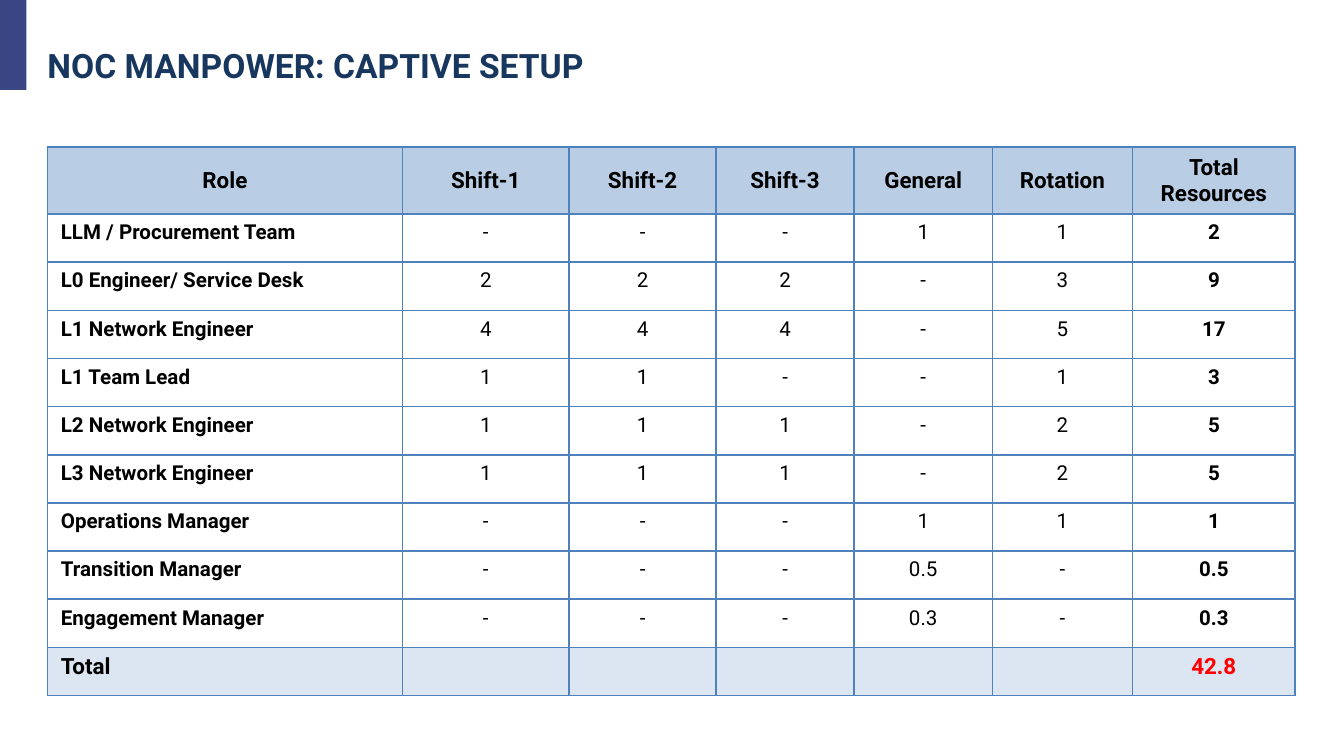
from pptx import Presentation
from pptx.dml.color import RGBColor
from pptx.enum.shapes import MSO_SHAPE as Shape
from pptx.enum.text import MSO_ANCHOR as Anchor, MSO_AUTO_SIZE as AutoSize, PP_ALIGN as Align
from pptx.oxml.ns import qn
from pptx.util import Pt
from lxml.etree import SubElement

FONT = "Roboto"
BLACK = RGBColor(0x00, 0x00, 0x00)
RED = RGBColor(0xFF, 0x00, 0x00)
NAVY = RGBColor(0x17, 0x37, 0x5E)
INDIGO = RGBColor(0x3A, 0x46, 0x83)
BORDER_BLUE = RGBColor(0x4F, 0x81, 0xBD)
HEADER_BLUE = RGBColor(0xB9, 0xCD, 0xE5)
TOTAL_BLUE = RGBColor(0xDC, 0xE6, 0xF2)

COLUMN_WIDTHS = [190.2, 89.4, 78.7, 74, 74, 75.1, 87.2]
HEADER_HEIGHT = 36
ROW_HEIGHT = 25.8

MANPOWER = [
    ["Role", "Shift-1", "Shift-2", "Shift-3", "General", "Rotation", "Total\nResources"],
    ["LLM / Procurement Team", "-", "-", "-", "1", "1", "2"],
    ["L0 Engineer/ Service Desk", "2", "2", "2", "-", "3", "9"],
    ["L1 Network Engineer", "4", "4", "4", "-", "5", "17"],
    ["L1 Team Lead", "1", "1", "-", "-", "1", "3"],
    ["L2 Network Engineer", "1", "1", "1", "-", "2", "5"],
    ["L3 Network Engineer", "1", "1", "1", "-", "2", "5"],
    ["Operations Manager", "-", "-", "-", "1", "1", "1"],
    ["Transition Manager", "-", "-", "-", "0.5", "-", "0.5"],
    ["Engagement Manager", "-", "-", "-", "0.3", "-", "0.3"],
    ["Total", "", "", "", "", "", "42.8"],
]


def format_run(run, size, color, bold):
    """Apply the slide's typeface with the given look to a run."""
    run.font.name = FONT
    run.font.size = Pt(size)
    run.font.bold = bold
    run.font.color.rgb = color


def add_accent_bar(slide):
    """Add the coloured bar in the top left corner."""
    bar = slide.shapes.add_shape(Shape.RECTANGLE, Pt(0), Pt(0), Pt(14.2), Pt(48.2))
    bar.shadow.inherit = False
    bar.fill.solid()
    bar.fill.fore_color.rgb = INDIGO
    bar.line.fill.background()


def set_title(slide, text):
    """Place and format the title placeholder."""
    title = slide.shapes.title
    title.left, title.top, title.width, title.height = Pt(25.4), Pt(20.4), Pt(593.3), Pt(28.8)
    frame = title.text_frame
    frame.text = text
    frame.word_wrap = True
    frame.auto_size = AutoSize.NONE
    frame.vertical_anchor = Anchor.MIDDLE
    frame.margin_left = Pt(0)
    paragraph = frame.paragraphs[0]
    paragraph.alignment = Align.LEFT
    format_run(paragraph.runs[0], 18, NAVY, True)


def set_borders(cell):
    """Draw a thin line on all four sides of a cell."""
    properties = cell._tc.get_or_add_tcPr()
    for side in ("a:lnL", "a:lnR", "a:lnT", "a:lnB"):
        line = SubElement(properties, qn(side), w=str(Pt(1)))
        fill = SubElement(line, qn("a:solidFill"))
        SubElement(fill, qn("a:srgbClr"), val=str(BORDER_BLUE))


def fill_cell(cell, text, size, color, bold, alignment, background):
    """Write one table cell with its text, borders and fill."""
    set_borders(cell)
    if background is None:
        cell.fill.background()
    else:
        cell.fill.solid()
        cell.fill.fore_color.rgb = background
    cell.text_frame.text = text
    for paragraph in cell.text_frame.paragraphs:
        paragraph.alignment = alignment
        for run in paragraph.runs:
            format_run(run, size, color, bold)
        if not paragraph.runs:
            SubElement(paragraph._p, qn("a:endParaRPr"), sz=str(size * 100))


def add_manpower_table(slide):
    """Add the table of roles, shifts and total resources."""
    last_row, last_column = len(MANPOWER) - 1, len(COLUMN_WIDTHS) - 1
    height = HEADER_HEIGHT + ROW_HEIGHT * last_row
    table = slide.shapes.add_table(
        len(MANPOWER), len(COLUMN_WIDTHS), Pt(25.4), Pt(78.7), Pt(sum(COLUMN_WIDTHS)), Pt(height)
    ).table
    table.horz_banding = False
    for column, width in zip(table.columns, COLUMN_WIDTHS):
        column.width = Pt(width)
    for row_index, values in enumerate(MANPOWER):
        is_header, is_total = row_index == 0, row_index == last_row
        table.rows[row_index].height = Pt(HEADER_HEIGHT if is_header else ROW_HEIGHT)
        background = HEADER_BLUE if is_header else TOTAL_BLUE if is_total else None
        for column_index, text in enumerate(values):
            cell = table.cell(row_index, column_index)
            bold = is_header or column_index in (0, last_column)
            color = RED if is_total and column_index == last_column else BLACK
            alignment = Align.LEFT if column_index == 0 and not is_header else Align.CENTER
            size = 12 if is_header or is_total else 11
            fill_cell(cell, text, size, color, bold, alignment, background)
            cell.vertical_anchor = Anchor.MIDDLE if is_header else Anchor.TOP


def main():
    """Build and save the presentation."""
    presentation = Presentation()
    presentation.slide_width, presentation.slide_height = Pt(720), Pt(405)
    slide = presentation.slides.add_slide(presentation.slide_layouts[5])
    add_accent_bar(slide)
    set_title(slide, "NOC MANPOWER: CAPTIVE SETUP")
    add_manpower_table(slide)
    presentation.save("out.pptx")


if __name__ == "__main__":
    main()
